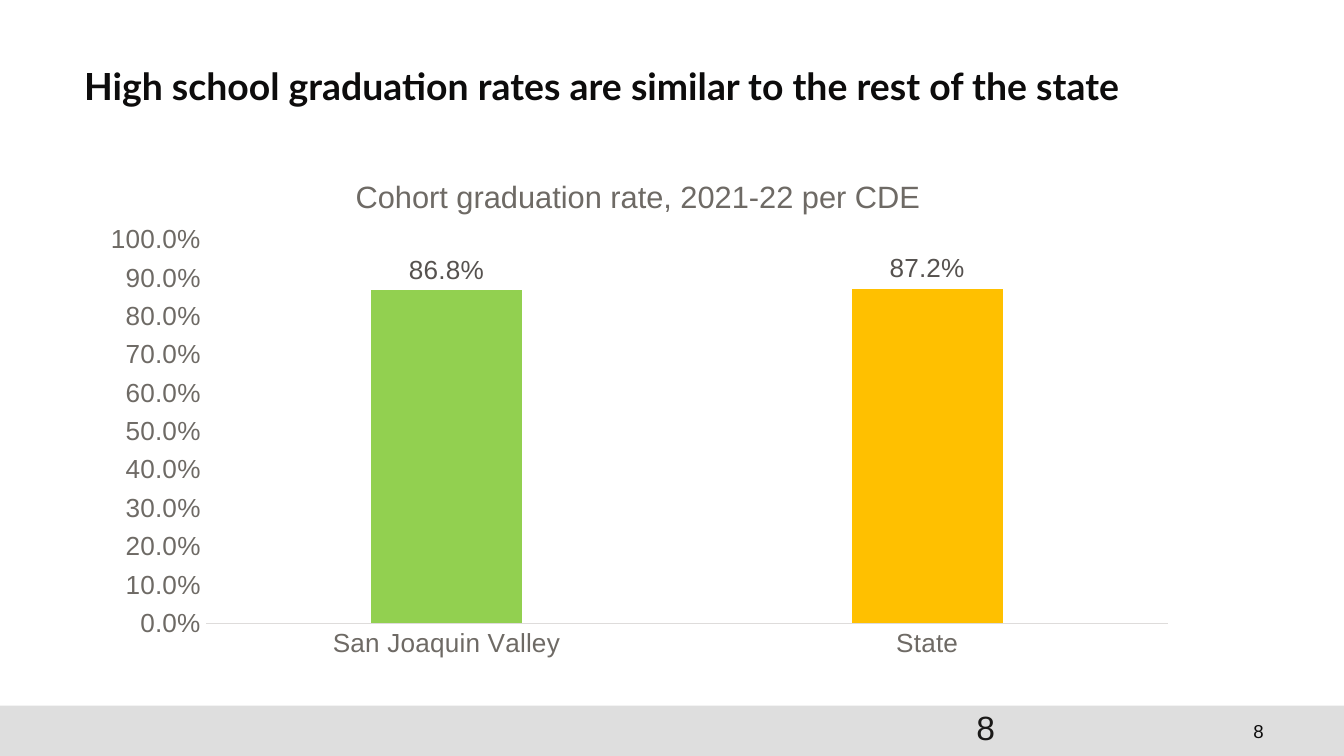
from lxml import etree
from pptx import Presentation
from pptx.chart.data import CategoryChartData
from pptx.dml.color import RGBColor
from pptx.enum.chart import XL_CHART_TYPE as ChartType
from pptx.enum.chart import XL_LABEL_POSITION as LabelPosition
from pptx.enum.chart import XL_TICK_MARK as TickMark
from pptx.enum.shapes import MSO_SHAPE as ShapeType
from pptx.enum.text import MSO_ANCHOR as Anchor
from pptx.enum.text import PP_ALIGN as Align
from pptx.oxml.ns import qn
from pptx.util import Pt

WIDTH, HEIGHT = 720, 405
FOOTER_TOP = 378
INK, AXIS_GRAY = "0D0C0C", "6E6A65"


def color(value):
    return RGBColor.from_string(value)


def set_font(font, size, value, name="Arial", bold=False):
    font.size, font.name, font.bold = Pt(size), name, bold
    font.color.rgb = color(value)


def place(shape, left, top, width, height):
    shape.left, shape.top = Pt(left), Pt(top)
    shape.width, shape.height = Pt(width), Pt(height)


def add_title(slide, text):
    title = slide.shapes.title
    place(title, 45, 36.6, 602, 57.6)
    frame = title.text_frame
    frame.text = text
    frame.word_wrap = True
    frame.vertical_anchor = Anchor.TOP
    frame.margin_left = frame.margin_right = 0
    frame.margin_top = frame.margin_bottom = 0
    paragraph = frame.paragraphs[0]
    paragraph.alignment = Align.LEFT
    paragraph.line_spacing = 0.9
    set_font(paragraph.runs[0].font, 20, INK, name="Lato", bold=True)


def add_footer_bar(slide):
    bar = slide.shapes.add_shape(
        ShapeType.RECTANGLE, 0, Pt(FOOTER_TOP), Pt(WIDTH), Pt(HEIGHT - FOOTER_TOP))
    bar.shadow.inherit = False
    bar.fill.solid()
    bar.fill.fore_color.rgb = color("DEDEDE")
    bar.line.fill.background()


def add_page_number(slide, text, top, height, size, value,
                    align=Align.LEFT, anchor=Anchor.TOP):
    box = slide.shapes.add_textbox(Pt(516), Pt(top), Pt(168), Pt(height))
    frame = box.text_frame
    frame.word_wrap = True
    frame.vertical_anchor = anchor
    paragraph = frame.paragraphs[0]
    paragraph.alignment = align
    run = paragraph.add_run()
    run.text = text
    set_font(run.font, size, value)


def set_layout(element, **settings):
    """Fix the position of a chart part, as fractions of the chart."""
    layout = element.find(qn("c:layout"))
    if layout is None:
        layout = etree.Element(qn("c:layout"))
        text = element.find(qn("c:tx"))
        element.insert(0 if text is None else element.index(text) + 1, layout)
    for child in list(layout):
        layout.remove(child)
    manual = etree.SubElement(layout, qn("c:manualLayout"))
    for tag, value in settings.items():
        etree.SubElement(manual, qn(f"c:{tag}")).set("val", str(value))


def style_axis(axis):
    axis.has_major_gridlines = False
    axis.major_tick_mark = axis.minor_tick_mark = TickMark.NONE
    set_font(axis.tick_labels.font, 14, AXIS_GRAY)


def add_rate_chart(slide, title, rates, colors):
    data = CategoryChartData(number_format="0.0%")
    data.categories = list(rates)
    data.add_series("Series 1", list(rates.values()))
    chart = slide.shapes.add_chart(
        ChartType.COLUMN_CLUSTERED, Pt(45.4), Pt(77.8), Pt(592), Pt(281.5), data).chart
    set_font(chart.font, 14, "1A1918")
    chart.has_legend = False

    # Chart title
    chart.has_title = True
    chart.chart_title.include_in_layout = False
    frame = chart.chart_title.text_frame
    frame.text = title
    set_font(frame.paragraphs[0].runs[0].font, 16.5, AXIS_GRAY)
    set_layout(chart.chart_title._element, xMode="edge", yMode="edge", x=0.24, y=0.05)

    # Axes
    style_axis(chart.category_axis)
    style_axis(chart.value_axis)
    chart.category_axis.format.line.color.rgb = color("DEDCDB")
    chart.category_axis.format.line.width = Pt(0.75)
    value_axis = chart.value_axis
    value_axis.minimum_scale, value_axis.maximum_scale = 0, 1
    value_axis.major_unit = 0.1
    value_axis.tick_labels.number_format = "0.0%"
    value_axis.tick_labels.number_format_is_linked = False
    value_axis.format.line.fill.background()

    # Columns and their labels
    plot = chart.plots[0]
    plot.gap_width, plot.overlap = 219, -27
    plot.vary_by_categories = False
    series = plot.series[0]
    series.format.fill.solid()
    series.format.fill.fore_color.rgb = color("196348")
    for index, value in enumerate(colors):
        fill = series.points[index].format.fill
        fill.solid()
        fill.fore_color.rgb = color(value)
    labels = series.data_labels
    labels.show_value = True
    labels.position = LabelPosition.OUTSIDE_END
    labels.number_format = "0.0%"
    labels.number_format_is_linked = False
    set_font(labels.font, 14, "56524F")

    plot_area = chart._chartSpace.chart.plotArea
    set_layout(plot_area, layoutTarget="inner", xMode="edge", yMode="edge",
               x=0.11, y=0.18, w=0.87, h=0.73)


def main():
    presentation = Presentation()
    presentation.slide_width, presentation.slide_height = Pt(WIDTH), Pt(HEIGHT)
    slide = presentation.slides.add_slide(presentation.slide_layouts[5])

    # Footer
    add_footer_bar(slide)
    add_page_number(slide, "8", FOOTER_TOP, 27, 10, INK, Align.RIGHT, Anchor.MIDDLE)
    add_page_number(slide, "8", 375, 21.6, 18, "1A1918")

    # Content
    add_title(slide, "High school graduation rates are similar to the rest of the state")
    add_rate_chart(slide, "Cohort graduation rate, 2021-22 per CDE",
                   {"San Joaquin Valley": 0.868, "State": 0.872},
                   ["92D050", "FFC000"])
    presentation.save("out.pptx")


if __name__ == "__main__":
    main()
